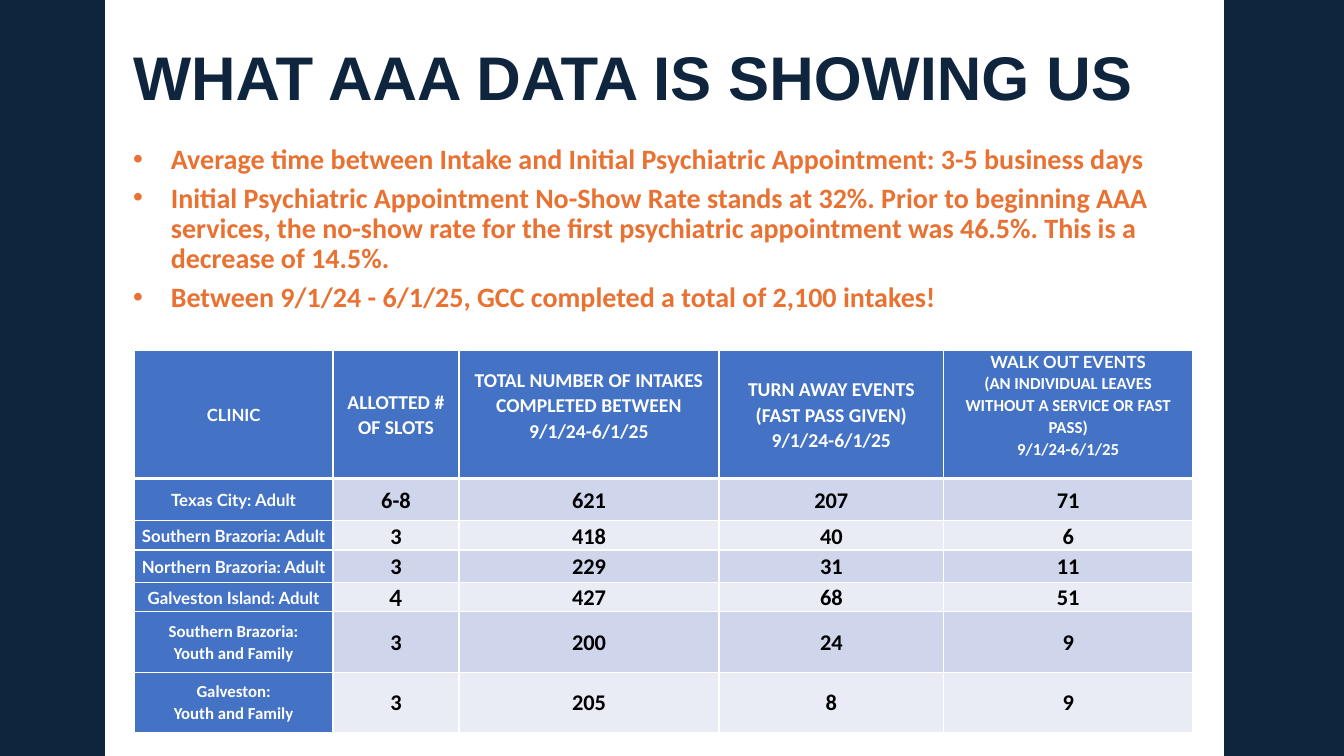
from dataclasses import dataclass
from lxml.etree import SubElement
from pptx import Presentation
from pptx.dml.color import RGBColor
from pptx.enum.shapes import MSO_SHAPE
from pptx.enum.text import MSO_ANCHOR, MSO_AUTO_SIZE, PP_ALIGN
from pptx.oxml.ns import qn
from pptx.util import Inches, Pt


@dataclass(frozen=True)
class Theme:
    """Colours, fonts and type sizes of the slide."""
    navy: str = "0F253E"
    white: str = "FFFFFF"
    black: str = "000000"
    orange: str = "E97132"
    blue: str = "4472C4"
    bands: tuple = ("CFD5EA", "E9EBF5")
    head: str = "Arial"
    main: str = "Calibri"
    alt: str = "Lato"
    title: int = 44
    body: int = 20
    value: int = 16
    label: int = 14
    small: int = 12


T = Theme()
COLS, ROWS = 160, 90
WIDE, HIGH = Inches(13.33), Inches(7.5)

TITLE = "WHAT AAA DATA IS SHOWING US"
POINTS = [
    "Average time between Intake and Initial Psychiatric Appointment: 3-5 business days",
    "Initial Psychiatric Appointment No-Show Rate stands at 32%. Prior to beginning AAA "
    "services, the no-show rate for the first psychiatric appointment was 46.5%. This is a "
    "decrease of 14.5%.",
    "Between 9/1/24 - 6/1/25, GCC completed a total of 2,100 intakes!",
]
SPAN = "9/1/24-6/1/25"
HEADS = [
    (["CLINIC"], T.small, [T.alt], 0),
    (["ALLOTTED # OF SLOTS"], T.label, [T.main], 0),
    (["TOTAL NUMBER OF INTAKES COMPLETED BETWEEN", SPAN], T.label, [T.main], 2.2),
    (["TURN AWAY EVENTS", "(FAST PASS GIVEN)", SPAN], T.label, [T.main], 0),
    (["WALK OUT EVENTS", "(AN INDIVIDUAL LEAVES WITHOUT A SERVICE OR FAST PASS)", SPAN],
     T.small, [T.alt, T.main], 2.2),
]
CLINICS = [
    (["Texas City: Adult"], T.alt, ["6-8", "621", "207", "71"]),
    (["Southern Brazoria: Adult"], T.alt, ["3", "418", "40", "6"]),
    (["Northern Brazoria: Adult"], T.alt, ["3", "229", "31", "11"]),
    (["Galveston Island: Adult"], T.alt, ["4", "427", "68", "51"]),
    (["Southern Brazoria:", "Youth and Family"], T.main, ["3", "200", "24", "9"]),
    (["Galveston:", "Youth and Family"], T.main, ["3", "205", "8", "9"]),
]
WIDTHS = [23.64, 15, 30.96, 26.76, 29.64]
HEIGHTS = [13.92, 5.04, 3.48, 3.84, 3.48, 7.2, 7.2]


def across(cols):
    """Length of a number of grid columns."""
    return round(WIDE * cols / COLS)


def down(rows):
    """Length of a number of grid rows."""
    return round(HIGH * rows / ROWS)


def place(left, top, cols, rows):
    """Box on the grid as left, top, width and height."""
    return across(left), down(top), across(cols), down(rows)


def color(code):
    """Colour from its hex code."""
    return RGBColor.from_string(code)


def write(frame, lines, size, fonts, ink, align=PP_ALIGN.LEFT, lead=0.9, gap=0, indent=0):
    """Fill a text frame; the last font serves all remaining lines."""
    frame.word_wrap = True
    for i, line in enumerate(lines):
        para = frame.paragraphs[0] if i == 0 else frame.add_paragraph()
        if indent:
            props = para._p.get_or_add_pPr()
            props.set("marL", str(indent))
            props.set("indent", str(-indent))
            SubElement(props, qn("a:buFont")).set("typeface", T.head)
            SubElement(props, qn("a:buChar")).set("char", "•")
        para.alignment, para.line_spacing = align, lead
        para.space_before = Pt(gap if i else 0)
        run = para.add_run()
        run.text = line
        font = run.font
        font.name, font.size, font.bold = fonts[min(i, len(fonts) - 1)], Pt(size), True
        font.color.rgb = color(ink)


def panel(slide, box):
    """White panel behind everything else."""
    shape = slide.shapes.add_shape(MSO_SHAPE.RECTANGLE, *box)
    shape.shadow.inherit = False
    shape.fill.solid()
    shape.fill.fore_color.rgb = shape.line.color.rgb = color(T.white)
    shape.line.width = Pt(1)
    slide.shapes._spTree.insert(2, shape._element)


def holder(shape, box, anchor):
    """Move a placeholder to its box and return its text frame."""
    shape.left, shape.top, shape.width, shape.height = box
    frame = shape.text_frame
    frame.auto_size, frame.vertical_anchor = MSO_AUTO_SIZE.NONE, anchor
    return frame


def edges(cell, base):
    """White borders, with the given width at the bottom."""
    props = cell._tc.get_or_add_tcPr()
    for side, width in (("L", 1), ("R", 1), ("T", 1), ("B", base)):
        line = SubElement(props, qn(f"a:ln{side}"), w=str(Pt(width)))
        fill = SubElement(line, qn("a:solidFill"))
        SubElement(fill, qn("a:srgbClr")).set("val", T.white)


def entry(cell, lines, size, fonts, ink, fill, base=1, foot=0):
    """Format and fill one table cell."""
    edges(cell, base)
    cell.fill.solid()
    cell.fill.fore_color.rgb = color(fill)
    cell.vertical_anchor = MSO_ANCHOR.MIDDLE
    cell.margin_left = cell.margin_right = Inches(0.07)
    cell.margin_top, cell.margin_bottom = 0, down(foot)
    write(cell.text_frame, lines, size, fonts, ink, align=PP_ALIGN.CENTER, lead=1.07)


def clinics(slide, box):
    """Table of intakes and events by clinic."""
    table = slide.shapes.add_table(len(HEIGHTS), len(WIDTHS), *box).table
    for col, width in zip(table.columns, WIDTHS):
        col.width = across(width)
    for row, height in zip(table.rows, HEIGHTS):
        row.height = down(height)
    for c, (lines, size, fonts, foot) in enumerate(HEADS):
        entry(table.cell(0, c), lines, size, fonts, T.white, T.blue, base=3, foot=foot)
    for r, (name, font, values) in enumerate(CLINICS, 1):
        entry(table.cell(r, 0), name, T.small, [font], T.white, T.blue)
        for c, value in enumerate(values, 1):
            face = T.alt if value == "4" else T.main
            entry(table.cell(r, c), [value], T.value, [face], T.black, T.bands[(r - 1) % 2])


def main():
    """Build and save the slide."""
    deck = Presentation()
    deck.slide_width, deck.slide_height = WIDE, HIGH
    slide = deck.slides.add_slide(deck.slide_layouts[1])
    back = slide.background.fill
    back.solid()
    back.fore_color.rgb = color(T.navy)
    panel(slide, place(12.6, 0, 133, 90))
    head = holder(slide.shapes.title, place(14.64, 1.68, 130.68, 12.48), MSO_ANCHOR.BOTTOM)
    write(head, [TITLE], T.title, [T.head], T.navy)
    body = holder(slide.placeholders[1], place(14.64, 16.68, 129.36, 22.8), MSO_ANCHOR.TOP)
    write(body, POINTS, T.body, [T.main], T.orange, gap=6, indent=across(4.5))
    clinics(slide, place(16, 41.76, sum(WIDTHS), sum(HEIGHTS)))
    deck.save("out.pptx")


if __name__ == "__main__":
    main()
